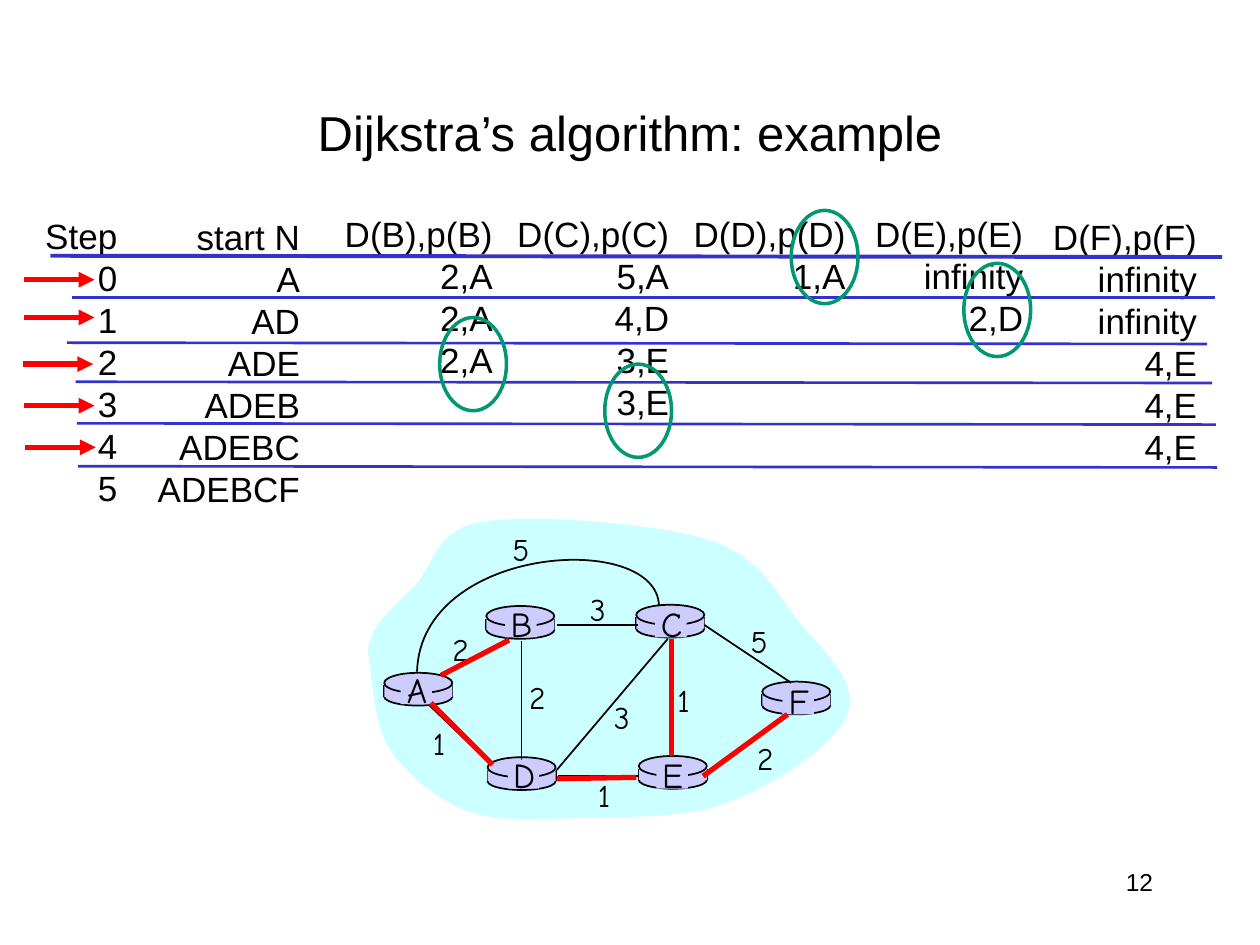
from lxml import etree
from pptx import Presentation
from pptx.dml.color import RGBColor
from pptx.enum.shapes import MSO_CONNECTOR, MSO_SHAPE
from pptx.enum.text import MSO_ANCHOR, MSO_AUTO_SIZE, PP_ALIGN
from pptx.oxml.ns import qn
from pptx.util import Pt

PX = 9144
BLACK = RGBColor(0x00, 0x00, 0x00)
BLUE = RGBColor(0x33, 0x33, 0xCC)
RED = RGBColor(0xFF, 0x00, 0x00)
GREEN = RGBColor(0x00, 0x97, 0x71)
LILAC = RGBColor(0xCC, 0xCC, 0xFF)
AQUA = RGBColor(0xCC, 0xFF, 0xFF)
STRAIGHT = MSO_CONNECTOR.STRAIGHT
OVAL, RECT = MSO_SHAPE.OVAL, MSO_SHAPE.RECTANGLE
CENTER, RIGHT = PP_ALIGN.CENTER, PP_ALIGN.RIGHT
TOP, MIDDLE = MSO_ANCHOR.TOP, MSO_ANCHOR.MIDDLE
FIT = MSO_AUTO_SIZE.SHAPE_TO_FIT_TEXT
NO_FIT = MSO_AUTO_SIZE.NONE

FONTS = {
    "title": {"name": "Arial", "size": Pt(28)},
    "number": {"name": "Arial", "size": Pt(14)},
    "table": {"name": "Arial", "size": Pt(20)},
    "node": {"name": "Comic Neue", "size": Pt(20)},
    "cost": {"name": "Comic Neue", "size": Pt(18)},
}
COLUMNS = [
    (103, 165, 80, ["Step", "0", "1", "2", "3", "4", "5"]),
    (248, 166, 136, ["start N", "A", "AD", "ADE", "ADEB", "ADEBC", "ADEBCF"]),
    (401, 164, 143, ["D(B),p(B)", "2,A", "2,A", "2,A"]),
    (541, 164, 143, ["D(C),p(C)", "5,A", "4,D", "3,E", "3,E"]),
    (681, 164, 143, ["D(D),p(D)", "1,A"]),
    (822, 164, 143, ["D(E),p(E)", "infinity", "2,D"]),
    (960, 166, 143, ["D(F),p(F)", "infinity", "infinity", "4,E", "4,E", "4,E"]),
]
RULES = [(40, 203, 970, 204), (57, 236, 964, 236), (53, 272, 958, 273),
         (60, 303, 962, 304), (61, 336, 965, 337), (62, 370, 966, 371)]
CLOUD = [
    (292, 517), (293, 496), (314, 481), (330, 464), (345, 447), (345, 420),
    (384, 414), (422, 408), (519, 415), (561, 428), (603, 441), (615, 469),
    (633, 492), (652, 515), (682, 541), (673, 566), (665, 590), (615, 623),
    (580, 636), (545, 650), (499, 648), (464, 649), (430, 650), (398, 653),
    (372, 644), (347, 635), (323, 615), (309, 594), (296, 573), (295, 533),
    (292, 517),
]
ARC_AC = [(523, 481), (522, 421), (334, 432), (331, 533)]
ROUTERS = [(305, 546), (387, 613), (386, 493), (505, 492), (507, 612), (605, 553)]
NAMES = [("A", 318, 536), ("E", 521, 603), ("D", 403, 603),
         ("C", 520, 483), ("B", 401, 483), ("F", 621, 544)]
EDGES = [(350, 536, 409, 504), (534, 508, 534, 599), (414, 509, 414, 603),
         (442, 611, 530, 507), (561, 614, 625, 567), (443, 616, 507, 616),
         (341, 560, 389, 606), (442, 496, 506, 496), (559, 496, 628, 542)]
COSTS = [("2", 348, 495), ("2", 409, 533), ("1", 333, 570), ("3", 476, 549),
         ("1", 464, 611), ("1", 527, 536), ("2", 590, 582), ("5", 585, 489),
         ("3", 457, 463), ("5", 396, 416)]
TREE = [(342, 558, 391, 607), (442, 618, 505, 617), (350, 536, 404, 508),
        (533, 600, 533, 507), (558, 616, 625, 567)]
ARROWS = [(19, 222), (19, 252), (18, 289), (19, 322), (20, 355)]
RINGS = [(628, 167), (765, 209), (349, 252), (480, 289)]


class Deck:
    def __init__(self, prs):
        self.s = prs.slides.add_slide(prs.slide_layouts[6])

    def paint(self, sp, fill=None, line=None, width=1):
        sp.shadow.inherit = False
        if fill is None:
            sp.fill.background()
        else:
            sp.fill.solid()
            sp.fill.fore_color.rgb = fill
        if line is None:
            sp.line.fill.background()
        else:
            sp.line.color.rgb = line
            sp.line.width = Pt(width)

    def shape(self, kind, x, y, w, h, **look):
        sp = self.s.shapes.add_shape(kind, x * PX, y * PX, w * PX, h * PX)
        self.paint(sp, **look)

    def curve(self, points, closed, **look):
        emu = [(x * PX, y * PX) for x, y in points]
        builder = self.s.shapes.build_freeform(*emu[0])
        builder.add_line_segments(emu[1:], close=closed)
        sp = builder.convert_to_shape()
        steps = list(sp._element.iter(qn("a:lnTo")))
        for i in range(0, len(points) - 1, 3):
            bezier = etree.Element(qn("a:cubicBezTo"))
            steps[i].addprevious(bezier)
            for step in steps[i:i + 3]:
                bezier.append(step[0])
                step.getparent().remove(step)
        self.paint(sp, **look)

    def line(self, x1, y1, x2, y2, color=BLACK, width=1, arrow=False):
        sp = self.s.shapes.add_connector(
            STRAIGHT, x1 * PX, y1 * PX, x2 * PX, y2 * PX)
        sp.line.color.rgb = color
        sp.line.width = Pt(width)
        if arrow:
            ln = sp.line._get_or_add_ln()
            etree.SubElement(ln, qn("a:tailEnd"), type="triangle")
        etree.SubElement(sp._element.spPr, qn("a:effectLst"))

    def text(self, x, y, w, h, lines, font, align=CENTER, wrap=False, anchor=TOP):
        tf = self.s.shapes.add_textbox(x * PX, y * PX, w * PX, h * PX).text_frame
        frame = {"word_wrap": wrap, "vertical_anchor": anchor,
                 "auto_size": NO_FIT if wrap else FIT}
        for key, value in frame.items():
            setattr(tf, key, value)
        for i, words in enumerate(lines):
            p = tf.add_paragraph() if i else tf.paragraphs[0]
            p.alignment = align
            r = p.add_run()
            r.text = words
            r.font.color.rgb = BLACK
            for key, value in FONTS[font].items():
                setattr(r.font, key, value)

    def router(self, x, y):
        self.shape(OVAL, x, y, 54, 14, fill=LILAC, line=BLACK)
        for side in (x, x + 54):
            self.line(side, y - 2, side, y + 7)
        self.shape(RECT, x, y - 2, 54, 9, fill=LILAC)
        self.shape(OVAL, x, y - 12, 54, 16, fill=LILAC, line=BLACK)

    def router_name(self, name, x, y):
        self.shape(RECT, x, y, 25, 23, fill=LILAC)
        self.text(x - 7, y - 10, 40, 43, [name], "node")


def main():
    prs = Presentation()
    prs.slide_width, prs.slide_height = 1000 * PX, 750 * PX
    deck = Deck(prs)
    deck.text(717, 683, 208, 50, ["12"], "number", RIGHT, wrap=True)
    deck.text(75, 42, 850, 125, ["Dijkstra’s algorithm: example"], "title",
              wrap=True, anchor=MIDDLE)
    for right, y, w, lines in COLUMNS:
        deck.text(right - w, y, w, 10 + 33 * len(lines), lines, "table", RIGHT)
    for i, rule in enumerate(RULES):
        deck.line(*rule, color=BLUE, width=1.5 if i else 2.25)

    deck.curve(CLOUD, True, fill=AQUA)
    for x, y in ROUTERS:
        deck.router(x, y)
    for edge in EDGES:
        deck.line(*edge)
    deck.curve(ARC_AC, False, line=BLACK)
    for name, x, y in NAMES:
        deck.router_name(name, x, y)
    for cost, x, y in COSTS:
        deck.text(x, y, 31 if cost == "1" else 35, 40, [cost], "cost")

    for branch in TREE:
        deck.line(*branch, color=RED, width=3)
    for x, y in ARROWS:
        deck.line(x, y, x + 56, y, color=RED, width=3, arrow=True)
    for x, y in RINGS:
        deck.shape(OVAL, x, y, 53, 74, line=GREEN, width=2)
    prs.save("out.pptx")


if __name__ == "__main__":
    main()
